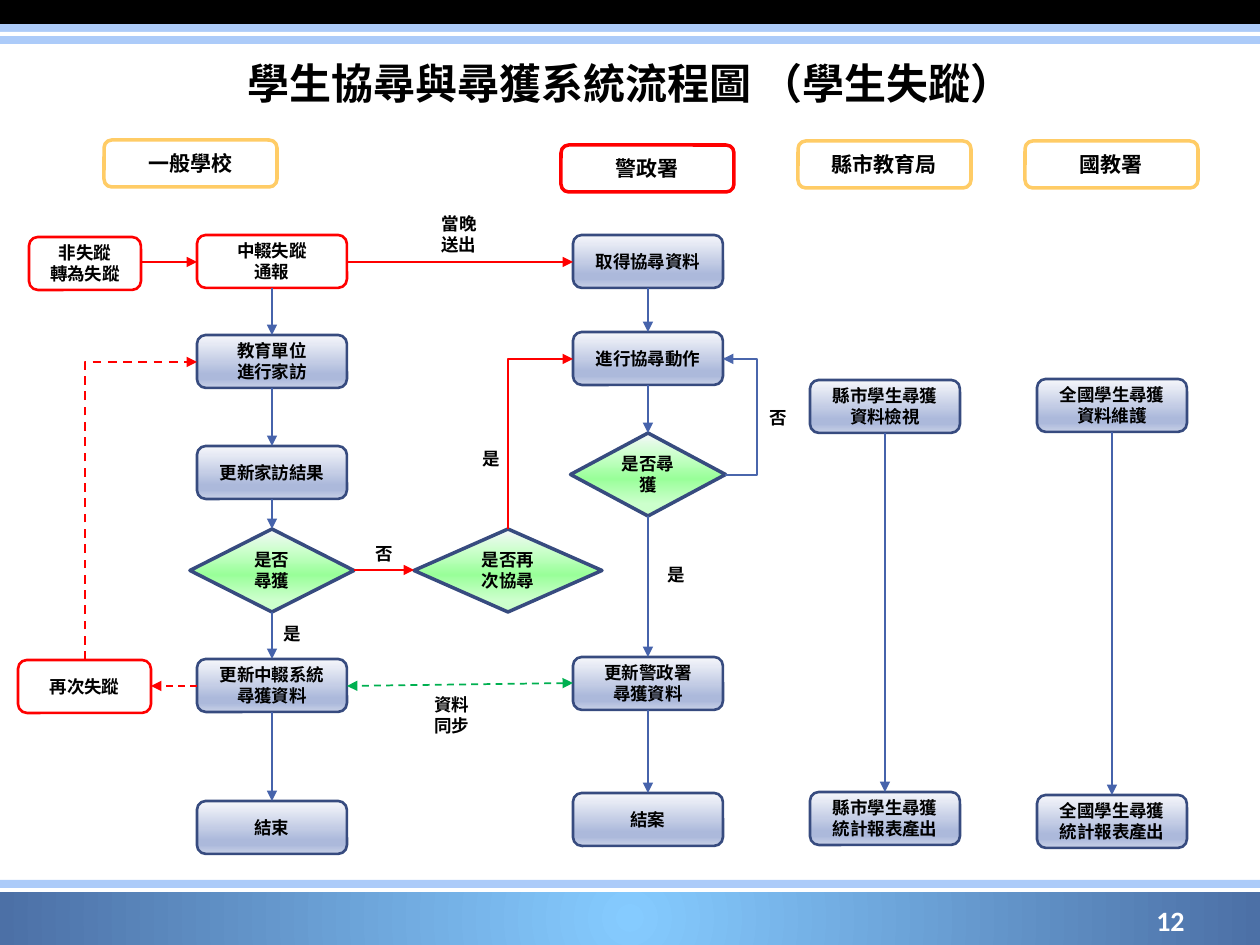
from lxml.etree import SubElement
from pptx import Presentation
from pptx.dml.color import RGBColor
from pptx.enum.dml import MSO_LINE
from pptx.enum.shapes import MSO_CONNECTOR as Wire, MSO_SHAPE as Preset
from pptx.enum.text import MSO_ANCHOR as Anchor, PP_ALIGN as Align
from pptx.oxml.ns import qn
from pptx.util import Pt

SCALE = 914400 / 126  # EMU in one px
CJK = "Noto Sans CJK SC"
RED, BLUE, NAVY, GREEN, GOLD = "FF0000", "4663AB", "374B7F", "00B050", "FFCC66"
STEEL = [(0, "F6F7FB"), (74, "ACB9DB"), (83, "ACB9DB"), (100, "C8D1E7")]
MINT = [(0, "F6F7FB"), (26, "CCFFCC"), (55, "99FF99"), (85, "CCFFCC")]
GLOW = [(0, "85CBFF"), (100, "4C70A6")]
NODE_W, NODE_H, DIAMOND_H = 150, 53, 83

# kind: preset, fill, line colour, line width, text size
KINDS = {
    "step": (Preset.ROUNDED_RECTANGLE, STEEL, NAVY, 1.5, 10),
    "alert": (Preset.ROUNDED_RECTANGLE, "FFFFFF", RED, 1.5, 10),
    "choice": (Preset.FLOWCHART_DECISION, MINT, NAVY, 2, 10),
    "unit": (Preset.ROUNDED_RECTANGLE, None, GOLD, 2, 12),
    "lead": (Preset.ROUNDED_RECTANGLE, None, RED, 2, 12),
}


def px(value):
    return round(value * SCALE)


def color(code):
    return RGBColor.from_string(code)


def set_all(target, values):
    for name, value in values.items():
        setattr(target, name, value)


def paint_gradient(shape, stops, radial=False):
    shape.fill.gradient()
    grad = shape._element.spPr.find(qn("a:gradFill"))
    for child in list(grad):
        grad.remove(child)
    stop_list = SubElement(grad, qn("a:gsLst"))
    for place, code in stops:
        stop = SubElement(stop_list, qn("a:gs"), pos=str(place * 1000))
        SubElement(stop, qn("a:srgbClr"), val=code)
    if radial:
        way = SubElement(grad, qn("a:path"), path="circle")
        SubElement(way, qn("a:fillToRect"), dict.fromkeys("ltrb", "50000"))
    else:
        SubElement(grad, qn("a:lin"), ang="5400000", scaled="0")


def write(shape, text, size, font=CJK, ink="000000", align=Align.CENTER, anchor=Anchor.MIDDLE):
    frame = shape.text_frame
    set_all(frame, {"word_wrap": True, "vertical_anchor": anchor})
    for index, line in enumerate(text.split("\n")):
        para = frame.paragraphs[0] if index == 0 else frame.add_paragraph()
        set_all(para, {"alignment": align, "line_spacing": Pt(size * 1.2)})
        span = para.add_run()
        span.text = line
        set_all(span.font, {"name": font, "size": Pt(size), "bold": True})
        span.font.color.rgb = color(ink)
        SubElement(span.font._element, qn("a:ea"), typeface=CJK)


def add_shape(page, preset, box, fill, stroke=None, width=0, radial=False):
    shape = page.shapes.add_shape(preset, *map(px, box))
    shape.shadow.inherit = False
    if fill is None:
        shape.fill.background()
    elif isinstance(fill, str):
        shape.fill.solid()
        shape.fill.fore_color.rgb = color(fill)
    else:
        paint_gradient(shape, fill, radial)
    if stroke:
        shape.line.color.rgb = color(stroke)
        shape.line.width = Pt(width)
    else:
        shape.line.fill.background()
    return shape


def add_text(page, box, text, size, **style):
    write(page.shapes.add_textbox(*map(px, box)), text, size, **style)


def add_node(page, kind, box, text):
    preset, fill, stroke, width, size = KINDS[kind]
    write(add_shape(page, preset, box, fill, stroke, width), text, size)


def add_arrow(page, start, end, stroke=BLUE, width=1, dash=False, both=False, kind=Wire.STRAIGHT):
    arrow = page.shapes.add_connector(kind, *map(px, start + end))
    arrow.line.color.rgb = color(stroke)
    arrow.line.width = Pt(width)
    if dash:
        arrow.line.dash_style = MSO_LINE.DASH
    outline = arrow.line._get_or_add_ln()
    for tip in ("headEnd", "tailEnd") if both else ("tailEnd",):
        SubElement(outline, qn("a:" + tip), type="triangle")
    SubElement(arrow._element.spPr, qn("a:effectLst"))
    return arrow


def add_corner(page, start, end, **style):
    """Arrow that runs up from start, then right to end."""
    arrow = add_arrow(page, start, end, kind=Wire.ELBOW, **style)
    wide, high = end[0] - start[0], start[1] - end[1]
    middle_x, middle_y = (start[0] + end[0]) / 2, (start[1] + end[1]) / 2
    set_all(arrow, {"left": px(middle_x - high / 2), "top": px(middle_y - wide / 2),
                    "width": px(high), "height": px(wide)})
    arrow._element.spPr.find(qn("a:prstGeom")).set("prst", "bentConnector2")
    frame = arrow._element.spPr.find(qn("a:xfrm"))
    for name, value in {"rot": "5400000", "flipH": "1", "flipV": "1"}.items():
        frame.set(name, value)


def add_loop(page, start, end, turn, **style):
    """Arrow that leaves sideways to x = turn and comes back to end."""
    arrow = add_arrow(page, start, end, kind=Wire.ELBOW, **style)
    guides = arrow._element.spPr.find(qn("a:prstGeom")).get_or_add_avLst()
    share = round((turn - start[0]) / (end[0] - start[0]) * 100000)
    SubElement(guides, qn("a:gd"), name="adj1", fmla=f"val {share}")


def draw_frame(page, box):
    left, top, width, height = box
    bands = [(0, 24, "000000"), (24, 20, "ACCBF9"), (32, 4, "FFFFFF"),
             (891, 54, GLOW), (880, 12, "ACCBF9"), (888, 4, "FFFFFF")]
    for offset, tall, fill in bands:
        add_shape(page, Preset.RECTANGLE, (left, top + offset, width, tall), fill, radial=True)
    add_text(page, (left + 63, top + 38, width - 126, 89), "學生協尋與尋獲系統流程圖 （學生失蹤）", 24)
    add_text(page, (left + 1026, top + 895, 171, 50), "12", 16,
             font="Calibri", ink="FFFFFF", align=Align.RIGHT)


def draw_lane(page, box, header, chain, extras=()):
    """Unit header, a chain of nodes joined top to bottom, and side nodes."""
    left, top, width, _ = box
    kind, shift, drop, name = header
    add_node(page, kind, (left + shift, top + drop, 173, 47), name)
    middle, previous = left + width / 2, None
    for kind, drop, wide, text in chain:
        high = DIAMOND_H if kind == "choice" else NODE_H
        add_node(page, kind, (middle - wide / 2, top + drop, wide, high), text)
        if previous:
            add_arrow(page, (middle, previous), (middle, top + drop))
        previous = top + drop + high
    for kind, shift, drop, wide, text in extras:
        high = DIAMOND_H if kind == "choice" else NODE_H
        add_node(page, kind, (left + shift, top + drop, wide, high), text)


def draw_links(page, box):
    left, top = box[:2]

    def at(x, y):
        return left + x, top + y

    # Straight links between lanes
    add_arrow(page, at(141, 122), at(197, 122), RED)
    add_arrow(page, at(347, 122), at(573, 122), RED, 1.5)
    add_arrow(page, at(354, 430), at(414, 430), RED)
    add_arrow(page, at(573, 543), at(347, 546), GREEN, dash=True, both=True)
    add_arrow(page, at(197, 546), at(151, 546), RED, dash=True)
    # Bent links
    add_corner(page, at(508, 389), at(573, 219), stroke=RED, width=1.25)
    add_corner(page, at(85, 520), at(197, 222), stroke=RED, width=1.25, dash=True)
    add_loop(page, at(725, 335), at(723, 219), left + 757, stroke="4A66AC", width=1.25)
    # Link labels
    labels = [(271, 477, 30, "是"), (757, 261, 30, "否"), (363, 397, 30, "否"),
              (470, 302, 30, "是"), (655, 418, 30, "是"),
              (418, 548, 67, "資料同步"), (423, 67, 72, "當晚送出")]
    for x, y, wide, text in labels:
        high = 34 if len(text) == 1 else 55
        add_text(page, (*at(x, y), wide, high), text, 10, font="Arial", anchor=Anchor.TOP)


def main():
    deck = Presentation()
    set_all(deck, {"slide_width": px(1260), "slide_height": px(945)})
    page = deck.slides.add_slide(deck.slide_layouts[6])
    draw_frame(page, (0, 0, 1260, 945))

    # Lanes: header, chain of (kind, drop, width, text), side nodes
    lanes = [
        (197, ("unit", -93, 0, "一般學校"),
         [("alert", 95, NODE_W, "中輟失蹤\n通報"), ("step", 195, NODE_W, "教育單位\n進行家訪"),
          ("step", 306, NODE_W, "更新家訪結果"), ("choice", 389, 164, "是否\n尋獲"),
          ("step", 519, NODE_W, "更新中輟系統\n尋獲資料"), ("step", 661, NODE_W, "結束")],
         [("alert", -168, 97, 112, "非失蹤\n轉為失蹤"), ("alert", -179, 520, 133, "再次失蹤"),
          ("choice", 217, 389, 188, "是否再次協尋")]),
        (573, ("lead", -12, 5, "警政署"),
         [("step", 95, NODE_W, "取得協尋資料"), ("step", 192, NODE_W, "進行協尋動作"),
          ("choice", 293, 155, "是否尋獲"), ("step", 517, NODE_W, "更新警政署\n尋獲資料"),
          ("step", 653, NODE_W, "結案")]),
        (810, ("unit", -12, 1, "縣市教育局"),
         [("step", 240, NODE_W, "縣市學生尋獲資料檢視"),
          ("step", 652, NODE_W, "縣市學生尋獲統計報表產出")]),
        (1037, ("unit", -12, 1, "國教署"),
         [("step", 239, NODE_W, "全國學生尋獲資料維護"),
          ("step", 655, NODE_W, "全國學生尋獲統計報表產出")]),
    ]
    for left, *parts in lanes:
        draw_lane(page, (left, 140, NODE_W, 714), *parts)
    draw_links(page, (0, 140, 1260, 714))
    deck.save("out.pptx")


if __name__ == "__main__":
    main()
